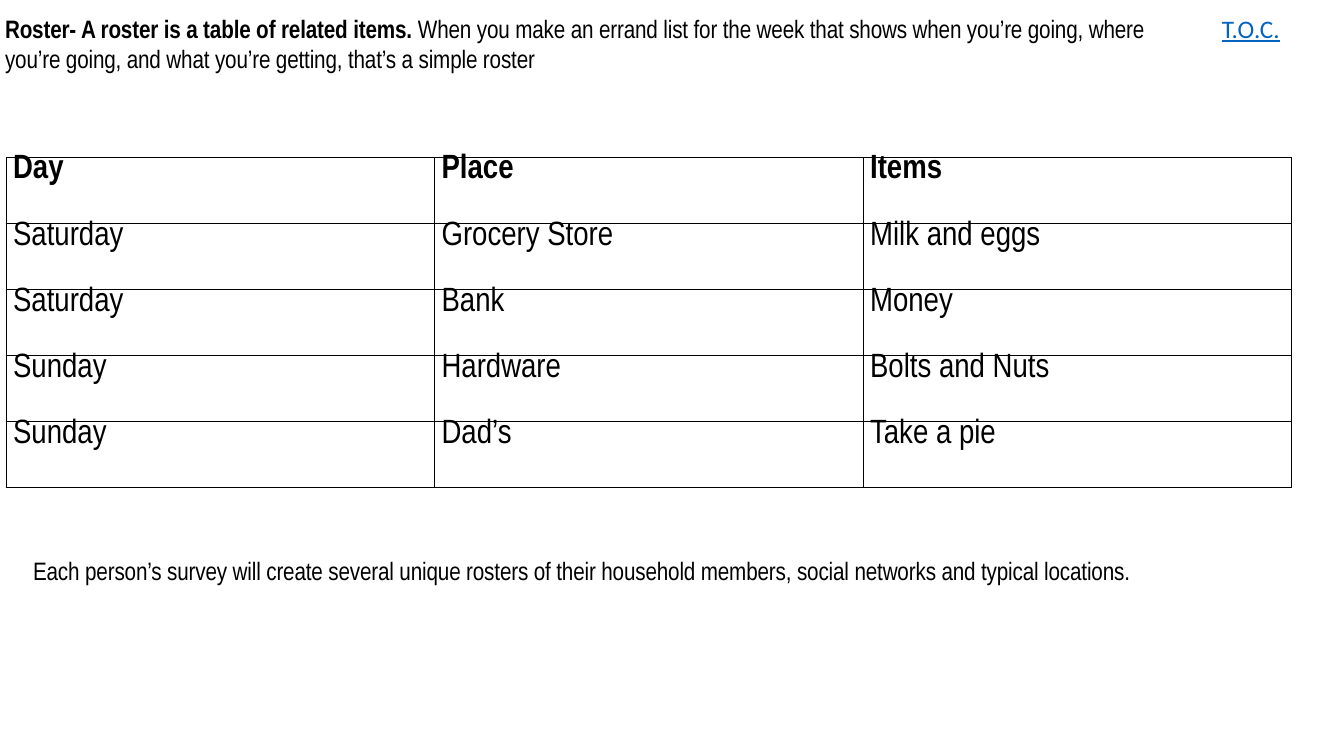
from lxml import etree
from pptx import Presentation
from pptx.dml.color import RGBColor
from pptx.enum.text import MSO_ANCHOR, MSO_AUTO_SIZE, PP_ALIGN
from pptx.oxml.ns import qn
from pptx.util import Inches, Pt

BLACK = RGBColor(0x00, 0x00, 0x00)
LINK_BLUE = RGBColor(0x05, 0x63, 0xC1)
BODY_FONT = "Arial Narrow"
LINK_FONT = "Calibri"
BODY_SIZE = 18
TABLE_SIZE = 24
TIGHT_SPACING = -10  # hundredths of a point
BORDER_WIDTH = Pt(0.58)
TITLE_ONLY = 5
LEFT, TOP = PP_ALIGN.LEFT, MSO_ANCHOR.TOP
NO_AUTOFIT = MSO_AUTO_SIZE.NONE

ROSTER = [
    ("Day", "Place", "Items"),
    ("Saturday", "Grocery Store", "Milk and eggs"),
    ("Saturday", "Bank", "Money"),
    ("Sunday", "Hardware", "Bolts and Nuts"),
    ("Sunday", "Dad’s", "Take a pie"),
]
DEFINITION = [
    ("Roster- A roster is a table of related items. ", True),
    ("When you make an errand list for the week that shows when you’re going, "
     "where you’re going, and what you’re getting, that’s a simple roster", False),
]
SUMMARY = ("Each person’s survey will create several unique rosters of their "
           "household members, social networks and typical locations.")


def add_run(paragraph, text, size, bold=False, font=BODY_FONT, color=BLACK, spacing=0):
    run = paragraph.add_run()
    run.text = text
    run.font.name = font
    run.font.size = Pt(size)
    run.font.bold = bold
    run.font.color.rgb = color
    if spacing:
        run._r.get_or_add_rPr().set("spc", str(spacing))
    return run


def add_definition(slide, left, top, width, height):
    title = slide.shapes.title
    title.left, title.top, title.width, title.height = left, top, width, height
    frame = title.text_frame
    frame.word_wrap = True
    frame.auto_size = NO_AUTOFIT
    frame.vertical_anchor = TOP
    paragraph = frame.paragraphs[0]
    paragraph.alignment = LEFT
    for text, bold in DEFINITION:
        add_run(paragraph, text, BODY_SIZE, bold, spacing=TIGHT_SPACING)


def add_contents_label(slide, left, top, width, height):
    frame = slide.shapes.add_textbox(left, top, width, height).text_frame
    frame.word_wrap = False
    run = add_run(frame.paragraphs[0], "T.O.C.", BODY_SIZE, font=LINK_FONT, color=LINK_BLUE)
    run.font.underline = True


def add_summary(slide, left, top, width, height):
    frame = slide.shapes.add_textbox(left, top, width, height).text_frame
    frame.word_wrap = True
    add_run(frame.paragraphs[0], SUMMARY, BODY_SIZE, spacing=TIGHT_SPACING)


def set_borders(cell):
    properties = cell._tc.get_or_add_tcPr()
    for position, side in enumerate(("a:lnL", "a:lnR", "a:lnT", "a:lnB")):
        line = etree.Element(qn(side), w=str(BORDER_WIDTH))
        fill = etree.SubElement(line, qn("a:solidFill"))
        etree.SubElement(fill, qn("a:srgbClr"), val=str(BLACK))
        properties.insert(position, line)


def add_roster(slide, left, top, width, height):
    table = slide.shapes.add_table(
        len(ROSTER), len(ROSTER[0]), left, top, width, height).table
    table.first_row = False
    table.horz_banding = False
    for row_index, row in enumerate(ROSTER):
        for column_index, text in enumerate(row):
            cell = table.cell(row_index, column_index)
            cell.margin_left = cell.margin_right = 0
            cell.margin_top = cell.margin_bottom = 0
            cell.fill.background()
            set_borders(cell)
            paragraph = cell.text_frame.paragraphs[0]
            paragraph.line_spacing = 0.86
            paragraph._p.get_or_add_pPr().set("marL", str(Inches(0.07)))
            add_run(paragraph, text, TABLE_SIZE, bold=row_index == 0)


def build_roster_slide(presentation):
    slide = presentation.slides.add_slide(presentation.slide_layouts[TITLE_ONLY])
    right = Inches(12.8)
    header_top = Inches(0.08)
    label_width, line_height = Inches(0.78), Inches(0.4)
    add_definition(slide, Inches(-0.05), header_top, Inches(11.9), Inches(1.31))
    add_contents_label(slide, right - label_width, header_top, label_width, line_height)
    add_roster(slide, Inches(0.06), Inches(1.56), Inches(12.75), Inches(3.28))
    summary_left = Inches(0.23)
    add_summary(slide, summary_left, Inches(5.46), right - summary_left, line_height)


def main():
    presentation = Presentation()
    presentation.slide_width = Inches(13.33)
    presentation.slide_height = Inches(7.5)
    build_roster_slide(presentation)
    presentation.save("out.pptx")


if __name__ == "__main__":
    main()
